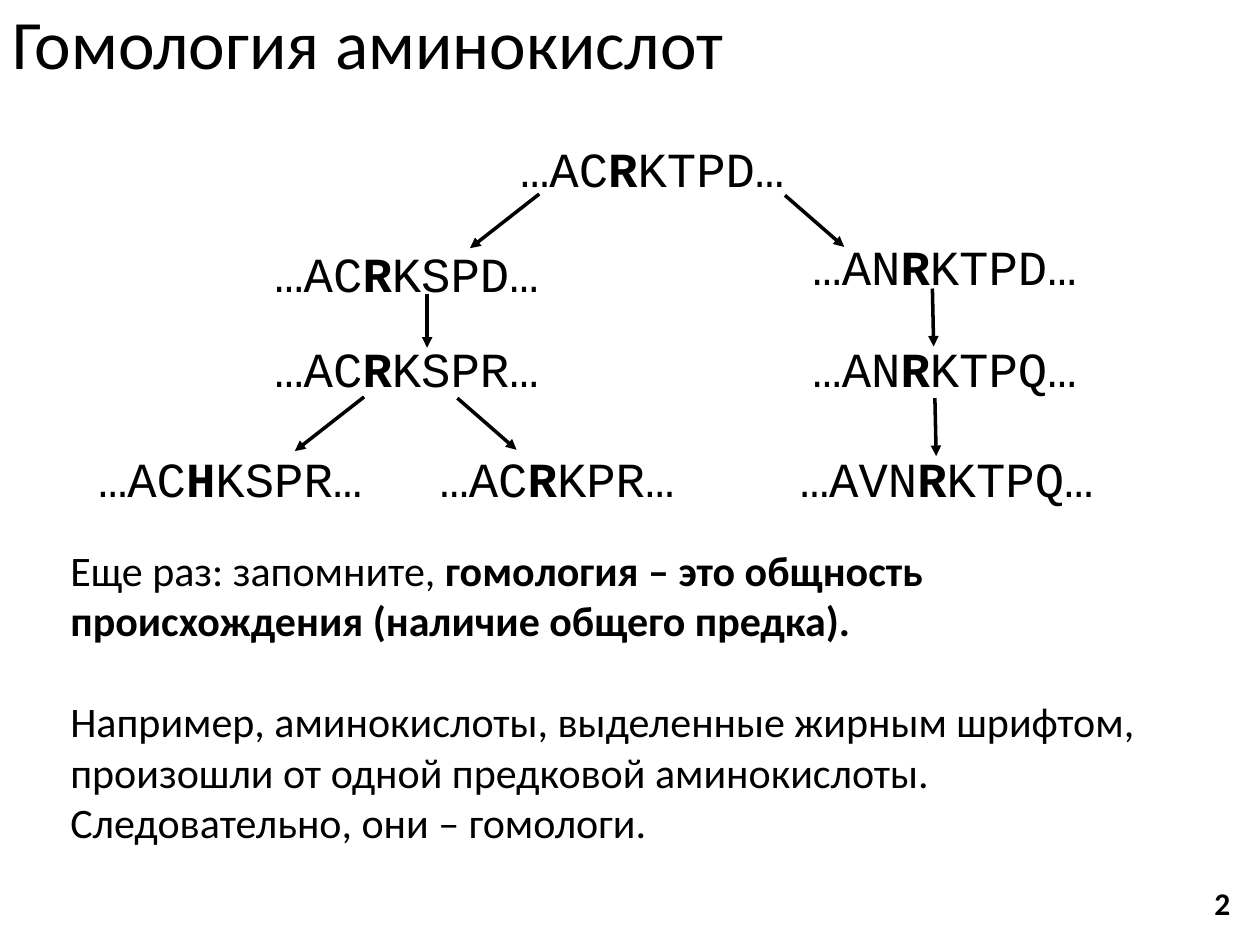
from lxml import etree
from pptx import Presentation
from pptx.dml.color import RGBColor
from pptx.enum.shapes import MSO_CONNECTOR
from pptx.enum.text import MSO_ANCHOR, MSO_AUTO_SIZE, PP_ALIGN
from pptx.oxml.ns import qn
from pptx.util import Inches, Pt

BLACK = RGBColor(0, 0, 0)
SANS, MONO = "Calibri", "Courier New"
LEFT = PP_ALIGN.LEFT
MIDDLE = MSO_ANCHOR.MIDDLE
FIXED, GROW = MSO_AUTO_SIZE.NONE, MSO_AUTO_SIZE.SHAPE_TO_FIT_TEXT
STRAIGHT = MSO_CONNECTOR.STRAIGHT

CHAR_W, INSETS, LINE_H = 0.235, 0.2, 0.57
ROWS = [1.05, 1.88, 2.64, 3.51]

# left, top, text before the homologous residue, residue, text after it
SEQUENCES = [
    (4.03, ROWS[0], "…AC", "R", "KTPD…"),
    (2.08, ROWS[1], "…AC", "R", "KSPD…"),
    (2.08, ROWS[2], "…AC", "R", "KSPR…"),
    (0.68, ROWS[3], "…AC", "H", "KSPR…"),
    (3.39, ROWS[3], "…AC", "R", "KPR…"),
    (6.35, 1.83, "…AN", "R", "KTPD…"),
    (6.35, ROWS[2], "…AN", "R", "KTPQ…"),
    (6.25, ROWS[3], "…AVN", "R", "KTPQ…"),
]

# start x, start y, end x, end y
DESCENT = [
    (4.28, 1.54, 3.73, 1.97),
    (3.39, 2.33, 3.39, 2.76),
    (2.89, 3.15, 2.34, 3.58),
    (3.63, 3.16, 4.10, 3.57),
    (6.23, 1.55, 6.70, 1.96),
    (7.40, 2.29, 7.41, 2.75),
    (7.42, 3.16, 7.43, 3.62),
]

EXPLANATION = [
    [("Еще раз: запомните, ", False),
     ("гомология – это общность происхождения (наличие общего предка).", True)],
    [("Например, аминокислоты, выделенные жирным шрифтом, произошли от одной "
      "предковой аминокислоты. Следовательно, они – гомологи.", False)],
]


def add_run(p, text, size, font=SANS, bold=False):
    r = p.add_run()
    r.text = text
    r.font.name = font
    r.font.size = Pt(size)
    r.font.bold = bold
    r.font.color.rgb = BLACK


def add_text(s, box, paragraphs, wrap=False, gap=0, **fmt):
    """Add a text box; each paragraph is a list of (text, bold) pairs."""
    tf = s.shapes.add_textbox(*map(Inches, box)).text_frame
    tf.word_wrap = wrap
    tf.auto_size = GROW
    for i, runs in enumerate(paragraphs):
        p = tf.add_paragraph() if i else tf.paragraphs[0]
        p.alignment = LEFT
        if i:
            p.space_before = Pt(gap)
        for text, bold in runs:
            add_run(p, text, bold=bold, **fmt)


def add_title(s, text):
    title = s.shapes.title
    title.left, title.top, title.width, title.height = map(Inches, (0, 0, 10, 0.75))
    tf = title.text_frame
    tf.auto_size = FIXED
    tf.vertical_anchor = MIDDLE
    p = tf.paragraphs[0]
    p.alignment = LEFT
    p.line_spacing = 0.9
    add_run(p, text, 39.6)


def add_sequence(s, left, top, before, residue, after):
    width = CHAR_W * len(before + residue + after) + INSETS
    runs = [(before, False), (residue, True), (after, False)]
    add_text(s, (left, top, width, LINE_H), [runs], size=28, font=MONO)


def add_arrow(s, *ends):
    line = s.shapes.add_connector(STRAIGHT, *map(Inches, ends))
    line.line.color.rgb = BLACK
    line.line.width = Pt(2)
    etree.SubElement(line.line._get_or_add_ln(), qn("a:tailEnd"), type="triangle")
    etree.SubElement(line._element.spPr, qn("a:effectLst"))


def main():
    prs = Presentation()
    prs.slide_width, prs.slide_height = Inches(10), Inches(7.5)
    s = prs.slides.add_slide(prs.slide_layouts.get_by_name("Title Only"))
    add_title(s, "Гомология аминокислот")
    for sequence in SEQUENCES:
        add_sequence(s, *sequence)
    for ends in DESCENT:
        add_arrow(s, *ends)
    add_text(s, (0.46, 4.27, 9.09, 2.52), EXPLANATION, wrap=True, gap=29, size=24)
    add_text(s, (9.54, 6.97, 0.33, 0.4), [[("2", True)]], size=18)
    prs.save("out.pptx")


if __name__ == "__main__":
    main()
